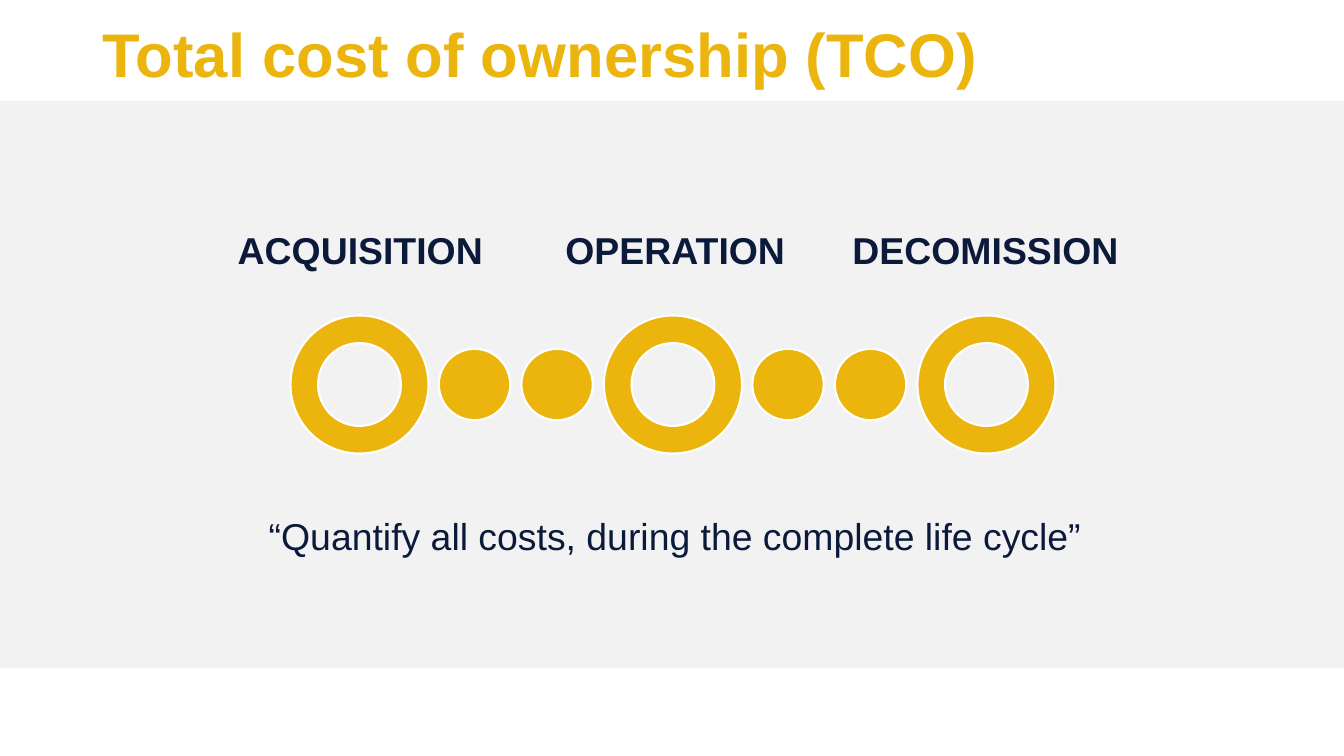
"""Build the slide on total cost of ownership across the life cycle."""
import pptx
import pptx.util
import pptx.dml.color
import pptx.enum.shapes
import pptx.enum.text

Cm = pptx.util.Cm
Pt = pptx.util.Pt
SHAPES = pptx.enum.shapes.MSO_SHAPE
ALIGN = pptx.enum.text.PP_ALIGN
ANCHOR = pptx.enum.text.MSO_ANCHOR
COLORS = {"gold": "EBB50E", "navy": "0B1A3B", "band": "F2F2F2", "white": "FFFFFF"}

deck = pptx.Presentation()
deck.slide_width, deck.slide_height = Cm(33.87), Cm(19.05)
page = deck.slides.add_slide(deck.slide_layouts[6])


def add_shape(kind, left, top, width, height, fill, line=None):
    shape = page.shapes.add_shape(kind, Cm(left), Cm(top), Cm(width), Cm(height))
    shape.shadow.inherit = False
    shape.fill.solid()
    shape.fill.fore_color.rgb = pptx.dml.color.RGBColor.from_string(COLORS[fill])
    if line:
        shape.line.color.rgb = pptx.dml.color.RGBColor.from_string(COLORS[line])
        shape.line.width = Pt(1.5)
    else:
        shape.line.fill.background()
    return shape


def add_text(text, left, top, width, height, size=26.7, color="navy", bold=False,
             align=ALIGN.CENTER, anchor=ANCHOR.TOP, wrap=False, spacing=None):
    box = page.shapes.add_textbox(Cm(left), Cm(top), Cm(width), Cm(height))
    frame = box.text_frame
    frame.word_wrap = wrap
    frame.vertical_anchor = anchor
    para = frame.paragraphs[0]
    para.alignment = align
    para.line_spacing = spacing
    span = para.add_run()
    span.text = text
    span.font.name = "Arial"
    span.font.size = Pt(size)
    span.font.bold = bold
    span.font.color.rgb = pptx.dml.color.RGBColor.from_string(COLORS[color])


add_shape(SHAPES.RECTANGLE, 0, 2.54, 33.87, 14.3, "band")

ring_size, dot_size = 3.48, 1.8
chain_left, chain_middle = 7.32, 9.69
ring_pitch, dot_offset, dot_pitch = 7.9, 3.74, 2.08
ring_count = 3
for index in range(ring_count):
    ring_left = chain_left + index * ring_pitch
    ring = add_shape(SHAPES.DONUT, ring_left, chain_middle - ring_size / 2,
                     ring_size, ring_size, "gold", "white")
    ring.adjustments[0] = 0.2
    if index < ring_count - 1:
        for step in range(2):
            add_shape(SHAPES.OVAL, ring_left + dot_offset + step * dot_pitch,
                      chain_middle - dot_size / 2, dot_size, dot_size, "gold", "white")

add_text("“Quantify all costs, during the complete life cycle”", 6.45, 12.8, 21.16, 1.4)
for phase, left, width in [("ACQUISITION", 5.72, 6.73),
                           ("OPERATION", 13.97, 6.1),
                           ("DECOMISSION", 21.21, 7.26)]:
    add_text(phase, left, 5.61, width, 1.4, bold=True)

add_text("Total cost of ownership (TCO)", 2.34, 1.07, 30.66, 1.35, size=44, color="gold",
         bold=True, align=ALIGN.LEFT, anchor=ANCHOR.BOTTOM, wrap=True, spacing=0.9)

deck.save("out.pptx")
